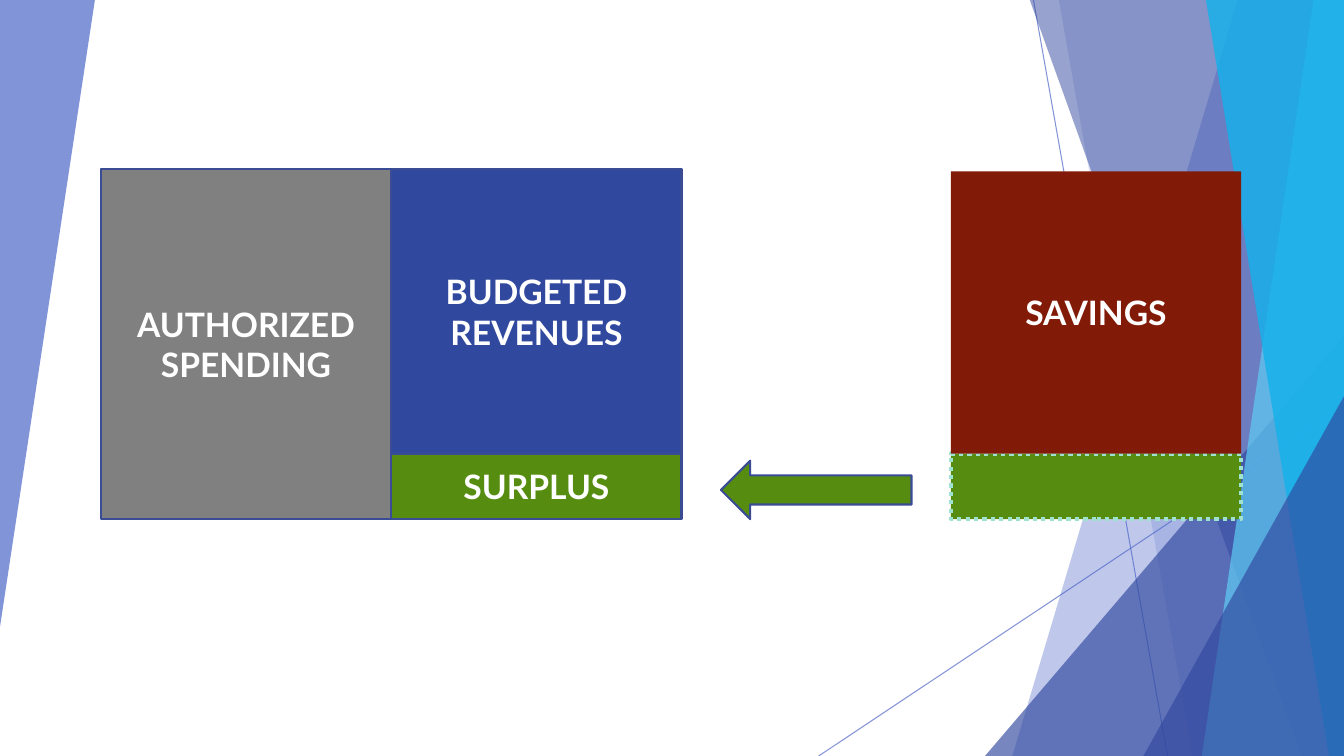
from lxml import etree
from pptx import Presentation
from pptx.dml.color import RGBColor
from pptx.enum.dml import MSO_LINE
from pptx.enum.shapes import MSO_CONNECTOR, MSO_SHAPE
from pptx.enum.text import MSO_ANCHOR, PP_ALIGN
from pptx.oxml.ns import qn
from pptx.util import Pt

PX = 9144  # EMU per px, 100 px to the inch
SLIDE_W, SLIDE_H = 1333, 750
FONT = "Lato"
RECTANGLE = MSO_SHAPE.RECTANGLE
TRIANGLE = MSO_SHAPE.ISOSCELES_TRIANGLE
RIGHT_ARROW = MSO_SHAPE.RIGHT_ARROW
STRAIGHT = MSO_CONNECTOR.STRAIGHT
DOTTED = MSO_LINE.ROUND_DOT
MIDDLE = MSO_ANCHOR.MIDDLE
CENTER = PP_ALIGN.CENTER

COLORS = {
    "periwinkle": "4E67C8",
    "navy": "31489F",
    "sky": "5ECCF3",
    "cyan": "12B2EB",
    "outline": "3A4C94",
    "gray": "808080",
    "green": "568D11",
    "mint": "9EE2CF",
    "red": "821A08",
    "white": "FFFFFF",
}


def rgb(color):
    return RGBColor.from_string(COLORS[color])


def set_opacity(shape, percent):
    for color in shape.element.spPr.iter(qn("a:srgbClr")):
        etree.SubElement(color, qn("a:alpha")).set("val", str(percent * 1000))


def style(shape, fill, outline=None, width=1.5):
    shape.shadow.inherit = False
    shape.fill.solid()
    shape.fill.fore_color.rgb = rgb(fill)
    if outline:
        shape.line.color.rgb = rgb(outline)
        shape.line.width = Pt(width)
    else:
        shape.line.fill.background()


def add_preset(slide, kind, box, fill, outline=None, width=1.5):
    shape = slide.shapes.add_shape(kind, *(n * PX for n in box))
    style(shape, fill, outline, width)
    return shape


def add_outline(slide, points, fill, opacity):
    builder = slide.shapes.build_freeform(*points[0], scale=PX)
    builder.add_line_segments(points[1:], close=True)
    shape = builder.convert_to_shape()
    style(shape, fill)
    set_opacity(shape, opacity)


def add_panel(slide, top_left, bottom_left, fill, opacity):
    """Full-height backdrop panel with a slanted left edge, reaching the right side."""
    corners = [(top_left, -1), (SLIDE_W, -1), (SLIDE_W, SLIDE_H), (bottom_left, SLIDE_H)]
    add_outline(slide, corners, fill, opacity)


def add_corner(slide, left, top):
    """Translucent triangle filling the bottom right corner."""
    box = (left, top, SLIDE_W - left, SLIDE_H - top)
    corner = add_preset(slide, TRIANGLE, box, "navy")
    corner.adjustments[0] = 1
    set_opacity(corner, 66)


def add_ray(slide, *ends):
    ray = slide.shapes.add_connector(STRAIGHT, *(n * PX for n in ends))
    ray.line.color.rgb = rgb("periwinkle")
    ray.line.width = Pt(0.75)
    set_opacity(ray, 70)
    etree.SubElement(ray.element.spPr, qn("a:effectLst"))


def add_block(slide, box, lines, fill, outline=None):
    frame = add_preset(slide, RECTANGLE, box, fill, outline).text_frame
    frame.word_wrap = True
    frame.vertical_anchor = MIDDLE
    for index, line in enumerate(lines):
        paragraph = frame.add_paragraph() if index else frame.paragraphs[0]
        paragraph.alignment = CENTER
        run = paragraph.add_run()
        run.text = line
        run.font.name = FONT
        run.font.size = Pt(24)
        run.font.bold = True
        run.font.color.rgb = rgb("white")


def add_backdrop(slide):
    add_outline(slide, [(0, -1), (94, -1), (94, 1), (0, 622)], "periwinkle", 70)
    add_ray(slide, 1025, 0, 1158, SLIDE_H)
    add_ray(slide, SLIDE_W, 403, 812, SLIDE_H)
    add_panel(slide, 1228, 1004, "periwinkle", 36)
    add_panel(slide, 1050, 1183, "periwinkle", 20)
    add_corner(slide, 977, 333)
    add_panel(slide, 1021, 1291, "navy", 50)
    add_panel(slide, 1303, 1192, "sky", 70)
    add_panel(slide, 1196, 1318, "cyan", 80)
    add_corner(slide, 1134, 393)


def add_budget(slide):
    block_w, top, surplus_top, bottom = 288, 168, 450, 515
    spending_x, savings_x, savings_top = 100, 943, 170
    revenue_x = spending_x + block_w
    surplus_h = bottom - surplus_top

    drawn_savings = add_preset(slide, RECTANGLE, (savings_x, surplus_top, block_w, surplus_h),
                               "green", "mint", 3)
    drawn_savings.line.dash_style = DOTTED
    add_block(slide, (spending_x, top, block_w, bottom - top),
              ["AUTHORIZED", "SPENDING"], "gray", "outline")
    add_block(slide, (revenue_x, top, block_w, surplus_top - top),
              ["BUDGETED", "REVENUES"], "navy", "outline")
    add_block(slide, (revenue_x, surplus_top, block_w, surplus_h),
              ["SURPLUS"], "green", "outline")
    add_block(slide, (savings_x, savings_top, block_w, surplus_top - savings_top),
              ["SAVINGS"], "red")
    transfer = add_preset(slide, RIGHT_ARROW, (715, 457, 189, 58), "green", "outline")
    transfer.rotation = 180


def main():
    deck = Presentation()
    deck.slide_width = SLIDE_W * PX
    deck.slide_height = SLIDE_H * PX
    slide = deck.slides.add_slide(deck.slide_layouts[6])
    add_backdrop(slide)
    add_budget(slide)
    deck.save("out.pptx")


if __name__ == "__main__":
    main()
